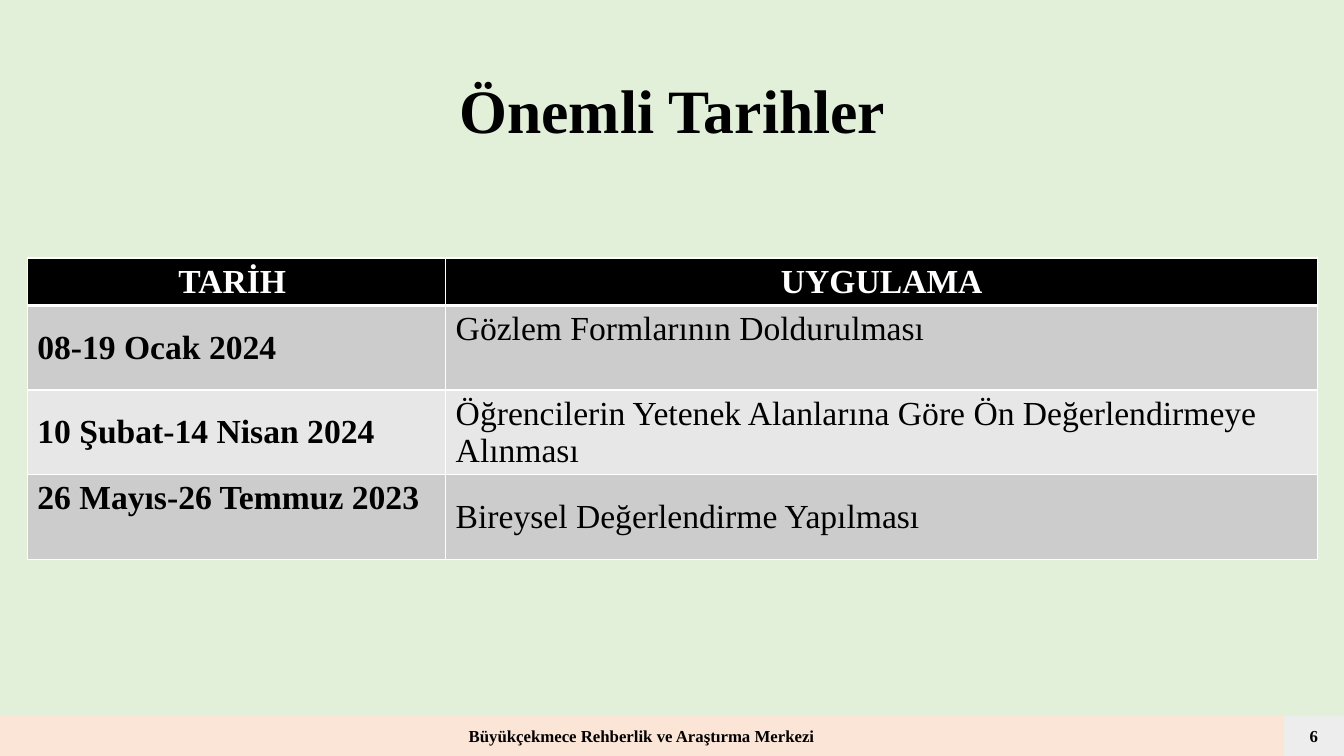
"""Build the slide of key dates with its table and footer."""
from dataclasses import dataclass

from lxml.etree import SubElement
from pptx import Presentation
from pptx.dml.color import RGBColor
from pptx.enum.shapes import MSO_SHAPE
from pptx.enum.text import MSO_ANCHOR, PP_ALIGN
from pptx.oxml import parse_xml
from pptx.oxml.ns import nsdecls, qn
from pptx.util import Inches, Pt


@dataclass(frozen=True)
class Theme:
    font: str = "Times New Roman"
    back: str = "E2F0D9"
    black: str = "000000"
    white: str = "FFFFFF"
    dark: str = "CCCCCC"
    light: str = "E7E7E7"
    peach: str = "FBE5D6"
    gray: str = "EDEDED"
    title: int = 44
    body: int = 24
    small: int = 12


theme = Theme()


def paint(fill, color):
    fill.solid()
    fill.fore_color.rgb = RGBColor.from_string(color)


def write(frame, lines, size, color=theme.black, bold=True, align=PP_ALIGN.CENTER):
    for i, line in enumerate(lines):
        para = frame.add_paragraph() if i else frame.paragraphs[0]
        para.alignment = align
        run = para.add_run()
        run.text = line
        run.font.name = theme.font
        run.font.size = Pt(size)
        run.font.bold = bold
        run.font.color.rgb = RGBColor.from_string(color)


deck = Presentation()
deck.slide_width = Inches(13.33)
deck.slide_height = Inches(7.5)
slide = deck.slides.add_slide(deck.slide_layouts[5])
paint(slide.background.fill, theme.back)

title = slide.shapes.title
title.left, title.top = Inches(0.92), Inches(0.4)
title.width, title.height = Inches(11.5), Inches(1.45)
title.text_frame.vertical_anchor = MSO_ANCHOR.MIDDLE
write(title.text_frame, ["Önemli Tarihler"], theme.title)
title.text_frame.paragraphs[0].line_spacing = 0.9

mid, top = MSO_ANCHOR.MIDDLE, MSO_ANCHOR.TOP
rows = [
    [(["TARİH "], mid), (["UYGULAMA"], mid)],
    [(["08-19 Ocak 2024"], mid), (["Gözlem Formlarının Doldurulması"], top)],
    [(["10 Şubat-14 Nisan 2024"], mid),
     (["Öğrencilerin Yetenek Alanlarına Göre Ön Değerlendirmeye", "Alınması"], mid)],
    [(["26 Mayıs-26 Temmuz 2023"], top), (["Bireysel Değerlendirme Yapılması"], mid)],
]
table = slide.shapes.add_table(
    len(rows), 2, Inches(0.27), Inches(2.56), Inches(12.8), Inches(2.99)).table
for col, width in zip(table.columns, (4.15, 8.65)):
    col.width = Inches(width)

for r, row in enumerate(rows):
    head = r == 0
    table.rows[r].height = Inches(0.47 if head else 0.84)
    shade = theme.black if head else theme.dark if r % 2 else theme.light
    for c, (lines, anchor) in enumerate(row):
        cell = table.cell(r, c)
        cell.vertical_anchor = anchor
        paint(cell.fill, shade)
        write(cell.text_frame, lines, theme.body,
              theme.white if head else theme.black, head or c == 0,
              PP_ALIGN.CENTER if head else PP_ALIGN.LEFT)
        props = cell._tc.get_or_add_tcPr()
        for i, side in enumerate("LRTB"):
            thick = (head and side == "B") or (r == 1 and side == "T")
            edge = parse_xml(f'<a:ln{side} {nsdecls("a")} w="{Pt(3 if thick else 1)}"/>')
            solid = SubElement(edge, qn("a:solidFill"))
            SubElement(solid, qn("a:srgbClr"), val=theme.white)
            props.insert(i, edge)

footer = [
    (0, 12.73, theme.peach, "Büyükçekmece Rehberlik ve Araştırma Merkezi"),
    (12.73, 0.6, theme.gray, "6"),
]
for left, width, color, label in footer:
    bar = slide.shapes.add_shape(
        MSO_SHAPE.RECTANGLE, Inches(left), Inches(7.1), Inches(width), Inches(0.4))
    bar.shadow.inherit = False
    bar.line.fill.background()
    paint(bar.fill, color)
    bar.text_frame.vertical_anchor = MSO_ANCHOR.MIDDLE
    write(bar.text_frame, [label], theme.small)

deck.save("out.pptx")
